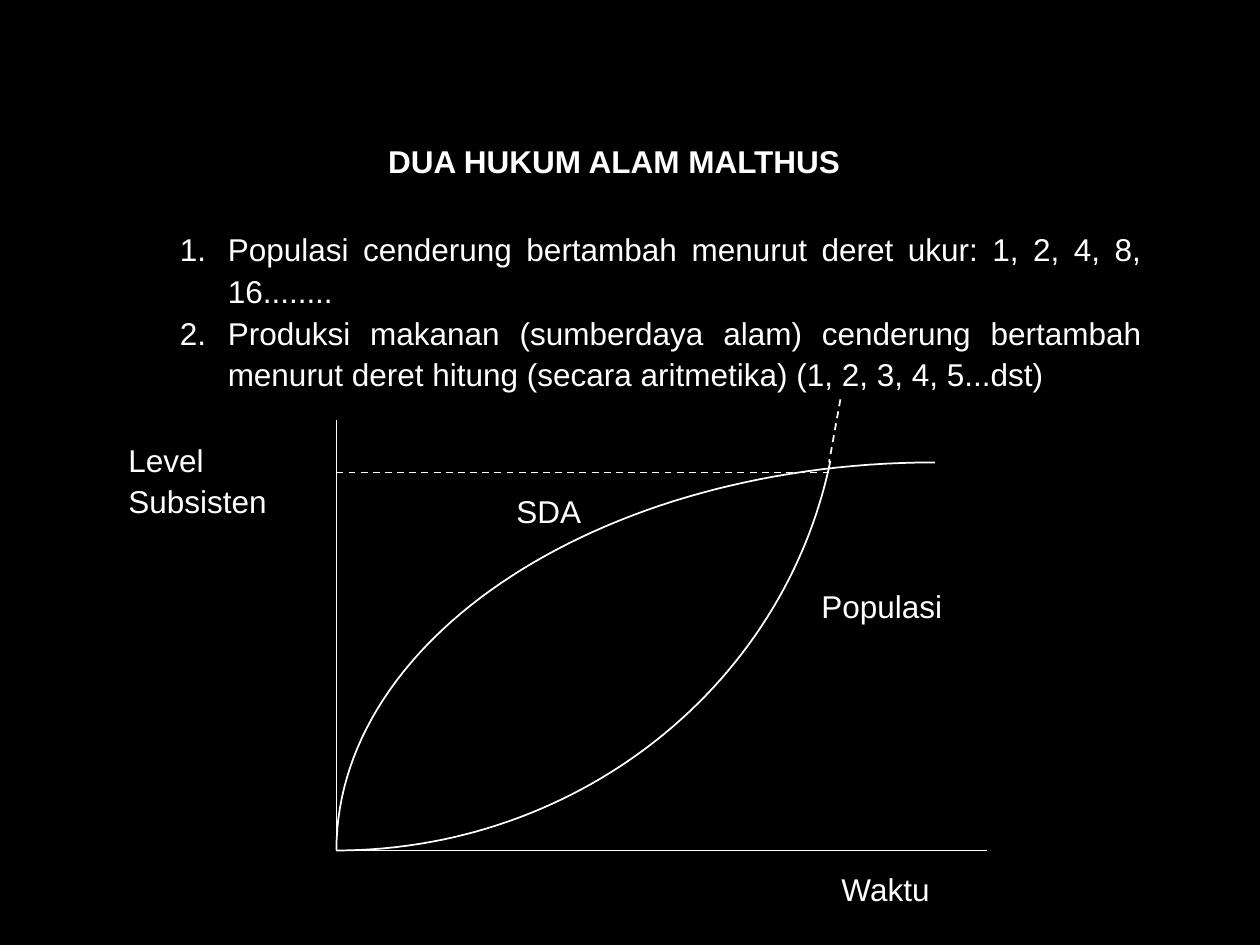
from lxml import etree
from pptx import Presentation
from pptx.dml.color import RGBColor
from pptx.enum.dml import MSO_LINE
from pptx.enum.shapes import MSO_CONNECTOR
from pptx.enum.text import MSO_ANCHOR, PP_ALIGN
from pptx.oxml.ns import qn
from pptx.util import Inches, Pt

BLACK = RGBColor(0x00, 0x00, 0x00)
WHITE = RGBColor(0xFF, 0xFF, 0xFF)
STRAIGHT = MSO_CONNECTOR.STRAIGHT
DASH = MSO_LINE.DASH
TOP = MSO_ANCHOR.TOP
CENTER = PP_ALIGN.CENTER
JUSTIFY = PP_ALIGN.JUSTIFY
CURVE_STEPS = 60

deck = Presentation()
deck.slide_width = Inches(10)
deck.slide_height = Inches(7.5)
page = deck.slides.add_slide(deck.slide_layouts[5])
page.background.fill.solid()
page.background.fill.fore_color.rgb = BLACK


def write_text(box, lines, align, spacing=1.1, bold=False, numbered=False):
    frame = box.text_frame
    frame.word_wrap = True
    frame.vertical_anchor = TOP
    frame.text = "\n".join(lines)
    for para in frame.paragraphs:
        para.alignment = align
        para.line_spacing = spacing
        para.space_before = Pt(0)
        if numbered:
            properties = para._p.get_or_add_pPr()
            properties.set("marL", str(Inches(0.38)))
            properties.set("indent", str(Inches(-0.38)))
            number = etree.SubElement(properties, qn("a:buAutoNum"))
            number.set("type", "arabicPeriod")
        for span in para.runs:
            span.font.name = "Arial"
            span.font.size = Pt(18)
            span.font.bold = bold
            span.font.color.rgb = WHITE


# Title
title = page.shapes.title
title.left, title.top = Inches(2.25), Inches(1.08)
title.width, title.height = Inches(5.25), Inches(0.5)
write_text(title, ["DUA HUKUM ALAM MALTHUS"], CENTER, spacing=1.0, bold=True)

# The two laws
laws = page.shapes.add_textbox(Inches(1.33), Inches(1.75), Inches(7.83), Inches(1.42))
write_text(laws, [
    "Populasi cenderung bertambah menurut deret ukur: 1, 2, 4, 8, 16........",
    "Produksi makanan (sumberdaya alam) cenderung bertambah menurut deret hitung "
    "(secara aritmetika) (1, 2, 3, 4, 5...dst)",
], JUSTIFY, numbered=True)

# Axes, subsistence level and projected population
for x1, y1, x2, y2, dash in [
    (2.67, 6.75, 7.83, 6.75, None),
    (2.67, 6.75, 2.67, 3.33, None),
    (2.67, 3.75, 6.58, 3.75, DASH),
    (6.67, 3.17, 6.58, 3.67, DASH),
]:
    line = page.shapes.add_connector(STRAIGHT, Inches(x1), Inches(y1), Inches(x2), Inches(y2))
    line.line.color.rgb = WHITE
    line.line.width = Pt(1)
    line.line.dash_style = dash
    etree.SubElement(line._element.spPr, qn("a:effectLst"))

# Population and resource curves, each a cubic Bezier through four control points
for controls in [
    [(2.67, 6.75), (4.58, 6.75), (6.22, 5.45), (6.59, 3.66)],
    [(2.67, 6.75), (2.67, 5.05), (4.79, 3.67), (7.42, 3.67)],
]:
    points = []
    for step in range(CURVE_STEPS + 1):
        t = step / CURVE_STEPS
        weights = [(1 - t) ** 3, 3 * t * (1 - t) ** 2, 3 * t ** 2 * (1 - t), t ** 3]
        x = sum(weight * control[0] for weight, control in zip(weights, controls))
        y = sum(weight * control[1] for weight, control in zip(weights, controls))
        points.append((Inches(x), Inches(y)))
    builder = page.shapes.build_freeform(*points[0])
    builder.add_line_segments(points[1:], close=False)
    curve = builder.convert_to_shape()
    curve.shadow.inherit = False
    curve.fill.background()
    curve.line.color.rgb = WHITE
    curve.line.width = Pt(1)

# Graph labels
for label, left, top, width, height in [
    ("Populasi", 6.42, 4.58, 1.25, 0.43),
    ("SDA", 4, 3.83, 0.75, 0.43),
    ("Waktu", 6.58, 6.83, 1.08, 0.43),
    ("Level Subsisten", 0.92, 3.42, 1.58, 0.76),
]:
    box = page.shapes.add_textbox(Inches(left), Inches(top), Inches(width), Inches(height))
    write_text(box, [label], JUSTIFY)

deck.save("out.pptx")
